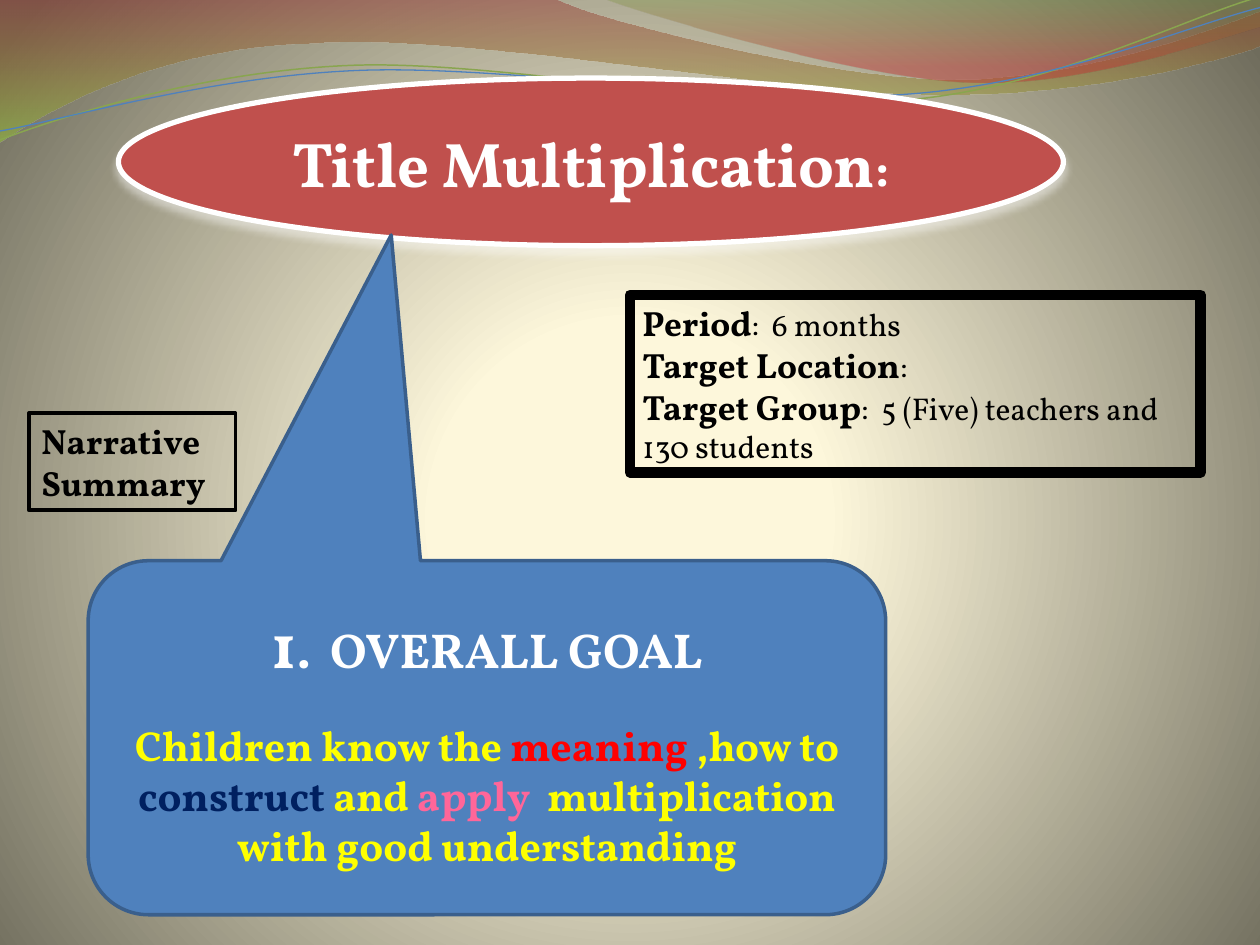
import pptx
import pptx.util
import pptx.dml.color
import pptx.enum.shapes
import pptx.enum.text
import pptx.oxml
import pptx.oxml.ns

Inches, Pt = pptx.util.Inches, pptx.util.Pt
KIND = pptx.enum.shapes.MSO_SHAPE
ALIGN = pptx.enum.text.PP_ALIGN
ANCHOR = pptx.enum.text.MSO_ANCHOR
FONT = "Vollkorn"
HEX = {
    "white": "FFFFFF", "black": "000000", "yellow": "FFFF00", "red": "FF0000",
    "navy": "002060", "pink": "FF6699", "brick": "C0504D", "blue": "4F81BD",
    "edge": "3A5F8C", "green": "89A54F",
}

# Text: paragraphs of runs (words, size, bold, colour)
TITLE = [[("Title Multiplication", 36, True, "white"), (":", 28, True, "white")]]
FACTS = [
    [(name, 20, True, "black"), (rest, 18, False, "black")]
    for name, rest in [
        ("Period", ":  6 months"),
        ("Target Location", ":"),
        ("Target Group", ":  5 (Five) teachers and 130 students"),
    ]
]
GOAL = [
    [("1", 36, True, "white"), (".  OVERALL GOAL", 28, True, "white")],
    [(words, 24, True, tint) for words, tint in [
        ("Children know the ", "yellow"), ("meaning", "red"),
        (" ,how to ", "yellow"), ("construct", "navy"), (" and ", "yellow"),
        ("apply", "pink"),
        ("  multiplication with good understanding", "yellow"),
    ]],
]
LABEL = [[("Narrative Summary", 20, True, "black")]]

# Waves: a point is a line end, six numbers are a curve; stops are (at, colour, alpha)
BANDS = [
    ([(0, 0), (4.4, -0.01), (4.76, 0.17, 6.64, 0.63, 7.58, 0.63),
      (8.53, 0.63, 9.58, 0.26, 10, 0.09), (10.01, 0.36),
      (9.83, 0.44, 8.7, 0.76, 7.46, 0.75), (6.22, 0.75, 3.82, 0.28, 2.57, 0.34),
      (1.29, 0.36, 0.46, 0.83, -0.01, 1.13)],
     [(0, "973330", 45), (100, "95C238", 55)]),
    ([(4.79, -0.01), (5.09, 0.11, 6.82, 0.62, 7.69, 0.65),
      (8.56, 0.69, 9.61, 0.32, 10, 0.21), (10, 0)],
     [(0, "769537", 30), (80, "BE3330", 45)]),
]
THREADS = [
    ([(0, 1.11), (0.48, 0.93, 1.58, 0.57, 2.77, 0.52),
      (3.95, 0.47, 5.93, 0.89, 7.13, 0.8), (8.33, 0.71, 9.38, 0.15, 9.98, -0.02)],
     "green", 0.85),
    ([(0, 1.04), (0.47, 0.96, 1.64, 0.61, 2.83, 0.56),
      (4.03, 0.51, 5.97, 0.84, 7.17, 0.75), (8.36, 0.67, 9.41, 0.21, 10, 0.06)],
     "blue", 0.75),
]
GLOW = [(0, "FFF9DA", 100), (25, "FDF7DB", 100), (100, "6F6C5C", 100)]
DOWN = '<a:lin ang="5400000" scaled="0"/>'
ROUND = ('<a:path path="circle"><a:fillToRect l="10000" t="110000" '
         'r="10000" b="100000"/></a:path>')
UNIT = 1000  # outline steps to the inch


def color(code):
    return pptx.dml.color.RGBColor.from_string(code)


def node(tag, body, attrs=""):
    space = pptx.oxml.ns.nsdecls("a")
    return pptx.oxml.parse_xml(f"<a:{tag} {space} {attrs}>{body}</a:{tag}>")


def swap(old, new):
    old.getparent().replace(old, new)


def blend(fill, owner, stops, way):
    """Give the fill of owner its own gradient stops and direction."""
    fill.gradient()
    old = owner.element.find(".//" + pptx.oxml.ns.qn("a:gradFill"))
    body = "".join(
        f'<a:gs pos="{at * 1000}"><a:srgbClr val="{code}">'
        f'<a:alpha val="{alpha * 1000}"/></a:srgbClr></a:gs>'
        for at, code, alpha in stops)
    swap(old, node("gradFill", f"<a:gsLst>{body}</a:gsLst>{way}",
                   'rotWithShape="1"'))


def wave(slide, moves, close):
    """Draw the line ends, then bend the sides that are curves."""
    moves = [[round(v * UNIT) for v in move] for move in moves]
    ends = [move[-2:] for move in moves]
    left, top = (min(axis) for axis in zip(*ends))
    pen = slide.shapes.build_freeform(*ends[0], scale=Inches(1) / UNIT)
    pen.add_line_segments(ends[1:], close=close)
    shape = pen.convert_to_shape()
    shape.shadow.inherit = False
    sides = shape.element.findall(".//" + pptx.oxml.ns.qn("a:lnTo"))
    for side, move in zip(sides, moves[1:]):
        if len(move) == 6:
            body = "".join(f'<a:pt x="{x - left}" y="{y - top}"/>'
                           for x, y in zip(move[::2], move[1::2]))
            swap(side, node("cubicBezTo", body))
    return shape


def stroke(shape, tint, width):
    shape.line.color.rgb = color(HEX[tint])
    shape.line.width = Pt(width)


def box(slide, kind, place, fill, line, text, align, anchor):
    shape = slide.shapes.add_shape(kind, *map(Inches, place))
    shape.shadow.inherit = False
    if fill:
        shape.fill.solid()
        shape.fill.fore_color.rgb = color(HEX[fill])
    else:
        shape.fill.background()
    stroke(shape, *line)
    frame = shape.text_frame
    frame.word_wrap = True
    frame.vertical_anchor = anchor
    for i, parts in enumerate(text):
        para = frame.add_paragraph() if i else frame.paragraphs[0]
        para.alignment = align
        for words, size, bold, tint in parts:
            run = para.add_run()
            run.text = words
            run.font.name = FONT
            run.font.size = Pt(size)
            run.font.bold = bold
            run.font.color.rgb = color(HEX[tint])
    return shape


deck = pptx.Presentation()
deck.slide_width, deck.slide_height = Inches(10), Inches(7.5)
slide = deck.slides.add_slide(deck.slide_layouts[6])

# Background and waves
blend(slide.background.fill, slide, GLOW, ROUND)
for moves, stops in BANDS:
    band = wave(slide, moves, True)
    blend(band.fill, band, stops, DOWN)
    band.line.fill.background()
for moves, tint, width in THREADS:
    thread = wave(slide, moves, False)
    thread.fill.background()
    stroke(thread, tint, width)

# Title oval with its soft pale shadow
oval = box(slide, KIND.OVAL, (0.94, 0.62, 7.5, 1.33), "brick", ("white", 3),
           TITLE, ALIGN.CENTER, ANCHOR.MIDDLE)
effects = oval.element.spPr.find(pptx.oxml.ns.qn("a:effectLst"))
effects.append(node(
    "outerShdw",
    f'<a:srgbClr val="{HEX["white"]}"><a:alpha val="48000"/></a:srgbClr>',
    f'blurRad="{Pt(4.5)}" dist="{Pt(3)}" dir="5400000" rotWithShape="0"'))

# Facts, goal callout and label
box(slide, KIND.RECTANGLE, (5, 2.34, 4.53, 1.41), None, ("black", 6),
    FACTS, ALIGN.LEFT, ANCHOR.TOP)
goal = box(slide, KIND.ROUNDED_RECTANGULAR_CALLOUT, (0.7, 4.45, 6.33, 2.81),
           "blue", ("edge", 2), GOAL, ALIGN.CENTER, ANCHOR.MIDDLE)
for i, value in enumerate((-0.12, -1.42, 0.17)):
    goal.adjustments[i] = value
goal.text_frame.paragraphs[1].space_before = Pt(22)
box(slide, KIND.RECTANGLE, (0.23, 3.28, 1.64, 0.77), None, ("black", 2.25),
    LABEL, ALIGN.LEFT, ANCHOR.TOP)

deck.save("out.pptx")
